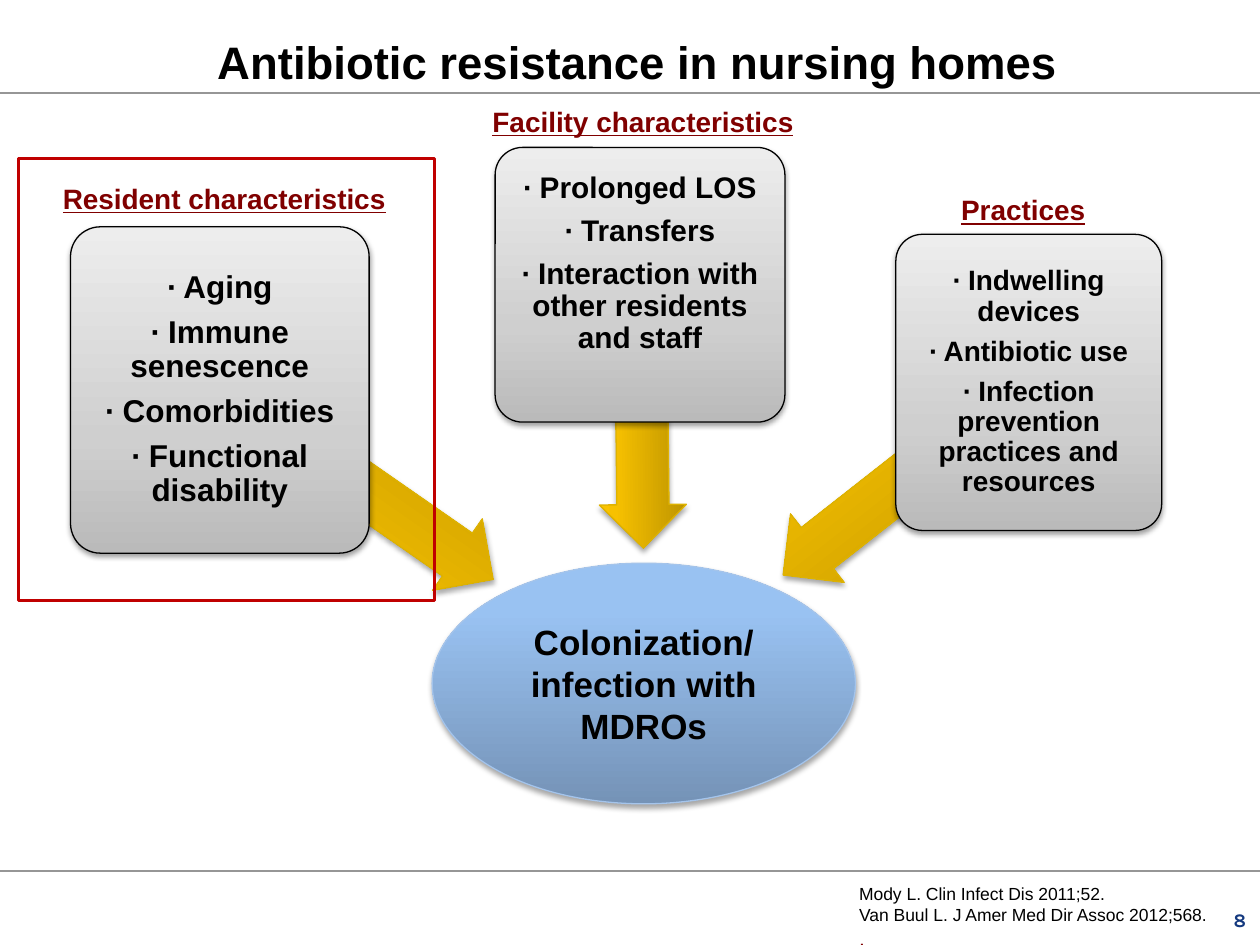
from lxml import etree
from pptx import Presentation
from pptx.dml.color import RGBColor
from pptx.enum import shapes, text
from pptx.oxml import ns
from pptx.util import Inches, Pt

BLACK = RGBColor(0x00, 0x00, 0x00)
MAROON = RGBColor(0x80, 0x00, 0x00)
RED = RGBColor(0xC0, 0x00, 0x00)
NAVY = RGBColor(0x14, 0x39, 0x7F)
RULE_GRAY = RGBColor(0x96, 0x96, 0x96)
SKY = RGBColor(0xA4, 0xC4, 0xEB)
GOLD = RGBColor(0xDE, 0xB2, 0x00)
BLUE_STOPS = [
    (0, RGBColor(0x75, 0x93, 0xB7)),
    (80, RGBColor(0x99, 0xC2, 0xF2)),
    (100, RGBColor(0x99, 0xC2, 0xF4)),
]
GOLD_STOPS = [
    (0, RGBColor(0xBC, 0x93, 0x00)),
    (80, RGBColor(0xF7, 0xC1, 0x00)),
    (100, RGBColor(0xFD, 0xC6, 0x00)),
]
GRAY_STOPS = [
    (0, RGBColor(0xBA, 0xBA, 0xBA)),
    (35, RGBColor(0xCF, 0xCF, 0xCF)),
    (100, RGBColor(0xED, 0xED, 0xED)),
]
CENTER, LEFT, RIGHT = text.PP_ALIGN.CENTER, text.PP_ALIGN.LEFT, text.PP_ALIGN.RIGHT
TOP, MIDDLE, BOTTOM = text.MSO_ANCHOR.TOP, text.MSO_ANCHOR.MIDDLE, text.MSO_ANCHOR.BOTTOM

deck = Presentation()
deck.slide_width, deck.slide_height = Inches(10), Inches(7.5)
page = deck.slides.add_slide(deck.slide_layouts[6])


def add_shaded(kind, place, stops, line_color, opacity, distance):
    shape = page.shapes.add_shape(kind, *map(Inches, place))
    shape.fill.gradient()
    shape.fill.gradient_angle = 90
    stop_list = shape._element.spPr.find(".//" + ns.qn("a:gsLst"))
    for old_stop in list(stop_list):
        stop_list.remove(old_stop)
    for position, color in stops:
        stop = etree.SubElement(stop_list, ns.qn("a:gs"), pos=str(position * 1000))
        etree.SubElement(stop, ns.qn("a:srgbClr"), val=str(color))
    shape.line.color.rgb = line_color
    shape.line.width = Pt(0.75)
    shape.shadow.inherit = False
    effects = shape._element.spPr.find(ns.qn("a:effectLst"))
    shadow = etree.SubElement(
        effects, ns.qn("a:outerShdw"), blurRad=str(Pt(3.1)), dist=str(Pt(distance)),
        dir="5400000", rotWithShape="0")
    shade = etree.SubElement(shadow, ns.qn("a:srgbClr"), val=str(BLACK))
    etree.SubElement(shade, ns.qn("a:alpha"), val=str(opacity * 1000))
    return shape


def write(box, lines, size, color=BLACK, bold=True, align=CENTER, anchor=MIDDLE,
          margins=(0, 0, 0, 0), font="Arial"):
    frame = box.text_frame
    frame.word_wrap = True
    frame.vertical_anchor = anchor
    frame.margin_left, frame.margin_top, frame.margin_right, frame.margin_bottom = map(Inches, margins)
    frame.text = "\n".join(lines)
    for para in frame.paragraphs:
        para.alignment = align
        for span in para.runs:
            span.font.name, span.font.size = font, Pt(size)
            span.font.bold, span.font.color.rgb = bold, color
    return frame.paragraphs


for y in (6.91, 0.74):
    rule = page.shapes.add_connector(
        shapes.MSO_CONNECTOR.STRAIGHT, Inches(0), Inches(y), Inches(10), Inches(y))
    rule.line.color.rgb = RULE_GRAY
    rule.line.width = Pt(1)
    etree.SubElement(rule._element.spPr, ns.qn("a:effectLst"))

number = page.shapes.add_textbox(Inches(9.73), Inches(7.21), Inches(0.16), Inches(0.18))
write(number, ["8"], 11, NAVY, align=RIGHT, anchor=BOTTOM, font="Karla")

sources = page.shapes.add_textbox(Inches(6.72), Inches(6.96), Inches(3.54), Inches(0.66))
source_lines = write(
    sources, ["Mody L. Clin Infect Dis 2011;52.", "Van Buul L. J Amer Med Dir Assoc 2012;568.", "."],
    10, bold=False, align=LEFT, anchor=TOP, margins=(0.1, 0.05, 0.1, 0.05))
source_lines[-1].runs[0].font.size = Pt(12)
source_lines[-1].runs[0].font.color.rgb = MAROON

outcome = add_shaded(shapes.MSO_SHAPE.OVAL, (3.43, 4.47, 3.36, 1.91), BLUE_STOPS, SKY, 35, 1.8)
write(outcome, ["Colonization/", "infection with MDROs"], 20, margins=(0.01,) * 4)

factors = [
    ((1.51, 3.5, 2.64, 0.69), 214.8, (0.56, 1.8, 2.37, 2.59), 18, 6.3, (0.04,) * 4,
     ["Aging", "Immune senescence", "Comorbidities", "Functional disability"]),
    ((4.05, 2.96, 2.09, 0.69), 269.4, (3.93, 1.17, 2.3, 2.18), 17, 6, (0.04, 0.04, 0.04, 0.37),
     ["Prolonged LOS", "Transfers", "Interaction with other residents and staff"]),
    ((5.95, 3.45, 2.49, 0.69), 321.9, (7.11, 1.86, 2.11, 2.35), 16, 5.6, (0.03,) * 4,
     ["Indwelling devices", "Antibiotic use", "Infection prevention practices and resources"]),
]
for arrow_place, angle, card_place, size, gap, margins, items in factors:
    arrow = add_shaded(shapes.MSO_SHAPE.LEFT_ARROW, arrow_place, GOLD_STOPS, GOLD, 35, 1.8)
    arrow.rotation = angle
    arrow.adjustments[0], arrow.adjustments[1] = 0.6, 0.5
    card = add_shaded(shapes.MSO_SHAPE.ROUNDED_RECTANGLE, card_place, GRAY_STOPS, BLACK, 38, 1.6)
    card.adjustments[0] = 0.1
    paras = write(card, [f"∙ {item}" for item in items], size, margins=margins)
    for index, para in enumerate(paras):
        para.line_spacing = 0.9
        para.space_before = Pt(gap if index else 0)

title = page.shapes.add_textbox(Inches(0.4), Inches(0.09), Inches(9.32), Inches(0.61))
write(title, ["Antibiotic resistance in nursing homes"], 26, anchor=BOTTOM)

headings = [
    ("Resident characteristics", 0.4, 1.39, 2.94),
    ("Facility characteristics", 3.81, 0.78, 3.05),
    ("Practices", 7.53, 1.48, 2.26),
]
for label, x, y, width in headings:
    heading = page.shapes.add_textbox(Inches(x), Inches(y), Inches(width), Inches(0.37))
    paras = write(heading, [label], 16, MAROON, align=LEFT, anchor=TOP, margins=(0.1, 0.05, 0.1, 0.05))
    paras[0].runs[0].font.underline = True

highlight = page.shapes.add_shape(
    shapes.MSO_SHAPE.RECTANGLE, Inches(0.15), Inches(1.26), Inches(3.3), Inches(3.51))
highlight.fill.background()
highlight.line.color.rgb = RED
highlight.line.width = Pt(1.75)
highlight.shadow.inherit = False

deck.save("out.pptx")
